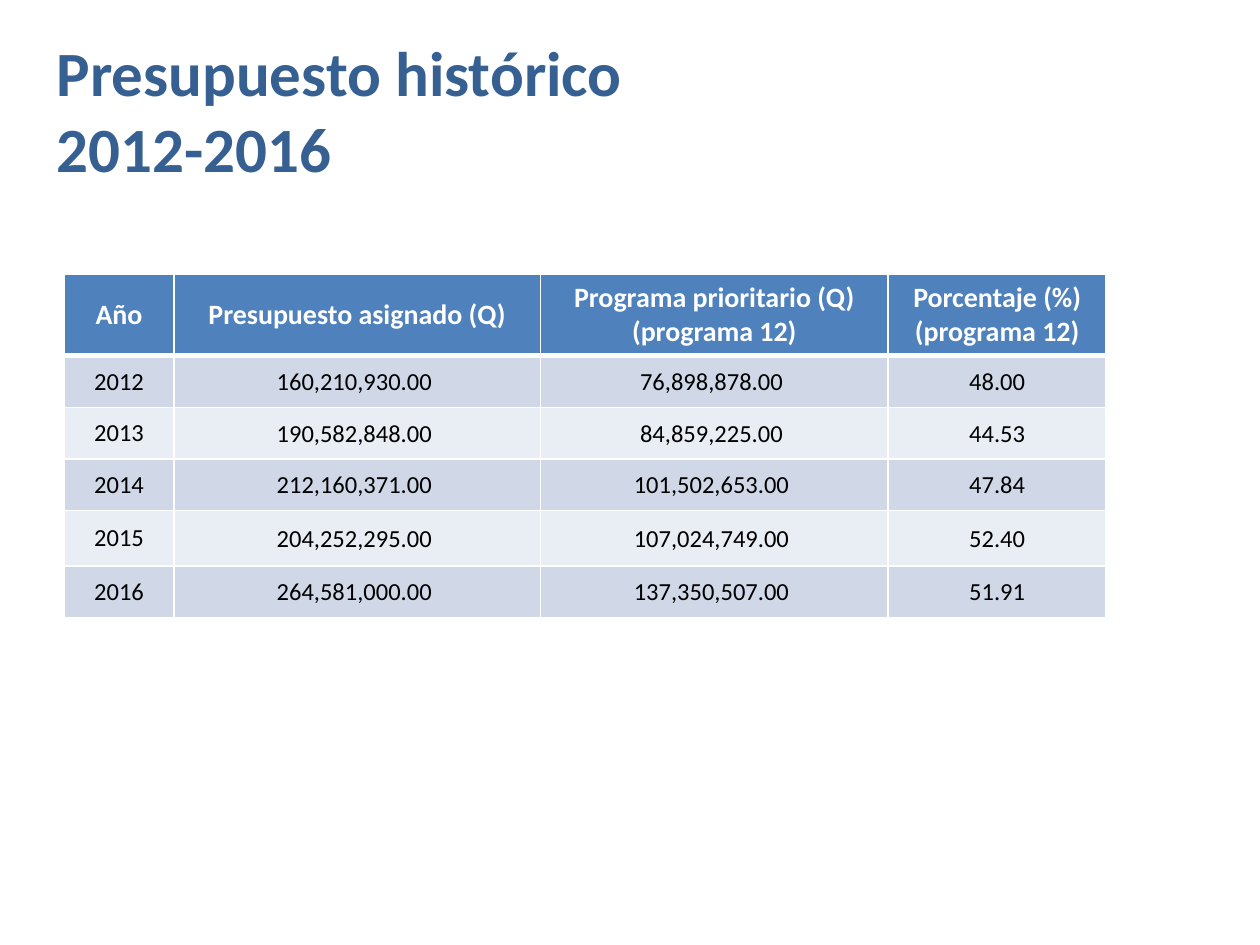
from lxml import etree
from pptx import Presentation
from pptx.dml.color import RGBColor
from pptx.enum.text import MSO_ANCHOR, PP_ALIGN
from pptx.oxml.ns import qn
from pptx.util import Inches, Pt

CENTER, LEFT = PP_ALIGN.CENTER, PP_ALIGN.LEFT
MIDDLE = MSO_ANCHOR.MIDDLE
FONT = "Calibri"
COLORS = {
    "title": "376092",
    "header": "4F81BD",
    "odd_row": "D0D8E8",
    "even_row": "E9EDF4",
    "white": "FFFFFF",
    "black": "000000",
}

TITLE = "Presupuesto histórico 2012-2016"
BUDGET = [
    ("Año", "Presupuesto asignado (Q)", "Programa prioritario (Q) (programa 12)",
     "Porcentaje (%) (programa 12)"),
    ("2012", "160,210,930.00 ", "76,898,878.00 ", "48.00"),
    ("2013", "190,582,848.00 ", "84,859,225.00 ", "44.53"),
    ("2014", "212,160,371.00 ", "101,502,653.00 ", "47.84"),
    ("2015", "204,252,295.00 ", "107,024,749.00 ", "52.40"),
    ("2016", "264,581,000.00 ", "137,350,507.00 ", "51.91"),
]
COLUMN_WIDTHS = [0.87, 2.91, 2.76, 1.73]
ROW_HEIGHTS = [0.62, 0.41, 0.41, 0.41, 0.44, 0.41]


def format_paragraph(paragraph, size, color, bold, alignment):
    paragraph.alignment = alignment
    paragraph.font.name = FONT
    paragraph.font.size = Pt(size)
    paragraph.font.bold = bold
    paragraph.font.color.rgb = RGBColor.from_string(COLORS[color])


def add_borders(cell, widths):
    properties = cell._tc.get_or_add_tcPr()
    for side, width in widths.items():
        line = etree.SubElement(properties, qn(f"a:ln{side}"), w=str(Pt(width)))
        fill = etree.SubElement(line, qn("a:solidFill"))
        etree.SubElement(fill, qn("a:srgbClr"), val=COLORS["white"])


def fill_cell(cell, text, row, column):
    is_header = row == 0
    add_borders(cell, {"L": 1, "R": 1, "T": 3 if row == 1 else 1, "B": 3 if is_header else 1})
    cell.fill.solid()
    background = "header" if is_header else "odd_row" if row % 2 else "even_row"
    cell.fill.fore_color.rgb = RGBColor.from_string(COLORS[background])
    cell.vertical_anchor = MIDDLE
    if not is_header and column > 0:
        cell.margin_left = cell.margin_right = cell.margin_top = Inches(0.01)
        cell.margin_bottom = 0
    cell.text = text
    size, color = (16, "white") if is_header else (14, "black")
    format_paragraph(cell.text_frame.paragraphs[0], size, color, is_header, CENTER)


def main():
    presentation = Presentation()
    presentation.slide_width, presentation.slide_height = Inches(10), Inches(7.5)
    slide = presentation.slides.add_slide(presentation.slide_layouts[5])

    title = slide.shapes.title
    title.left, title.top = Inches(0.35), Inches(0.21)
    title.width, title.height = Inches(5.21), Inches(1.32)
    title.text_frame.text = TITLE
    title.text_frame.vertical_anchor = MIDDLE
    format_paragraph(title.text_frame.paragraphs[0], 36, "title", True, LEFT)

    table = slide.shapes.add_table(
        len(BUDGET), len(COLUMN_WIDTHS), Inches(0.51), Inches(2.18),
        Inches(sum(COLUMN_WIDTHS)), Inches(sum(ROW_HEIGHTS))).table
    for column, width in zip(table.columns, COLUMN_WIDTHS):
        column.width = Inches(width)
    for row, height in zip(table.rows, ROW_HEIGHTS):
        row.height = Inches(height)
    for row, values in enumerate(BUDGET):
        for column, text in enumerate(values):
            fill_cell(table.cell(row, column), text, row, column)

    presentation.save("out.pptx")


if __name__ == "__main__":
    main()
